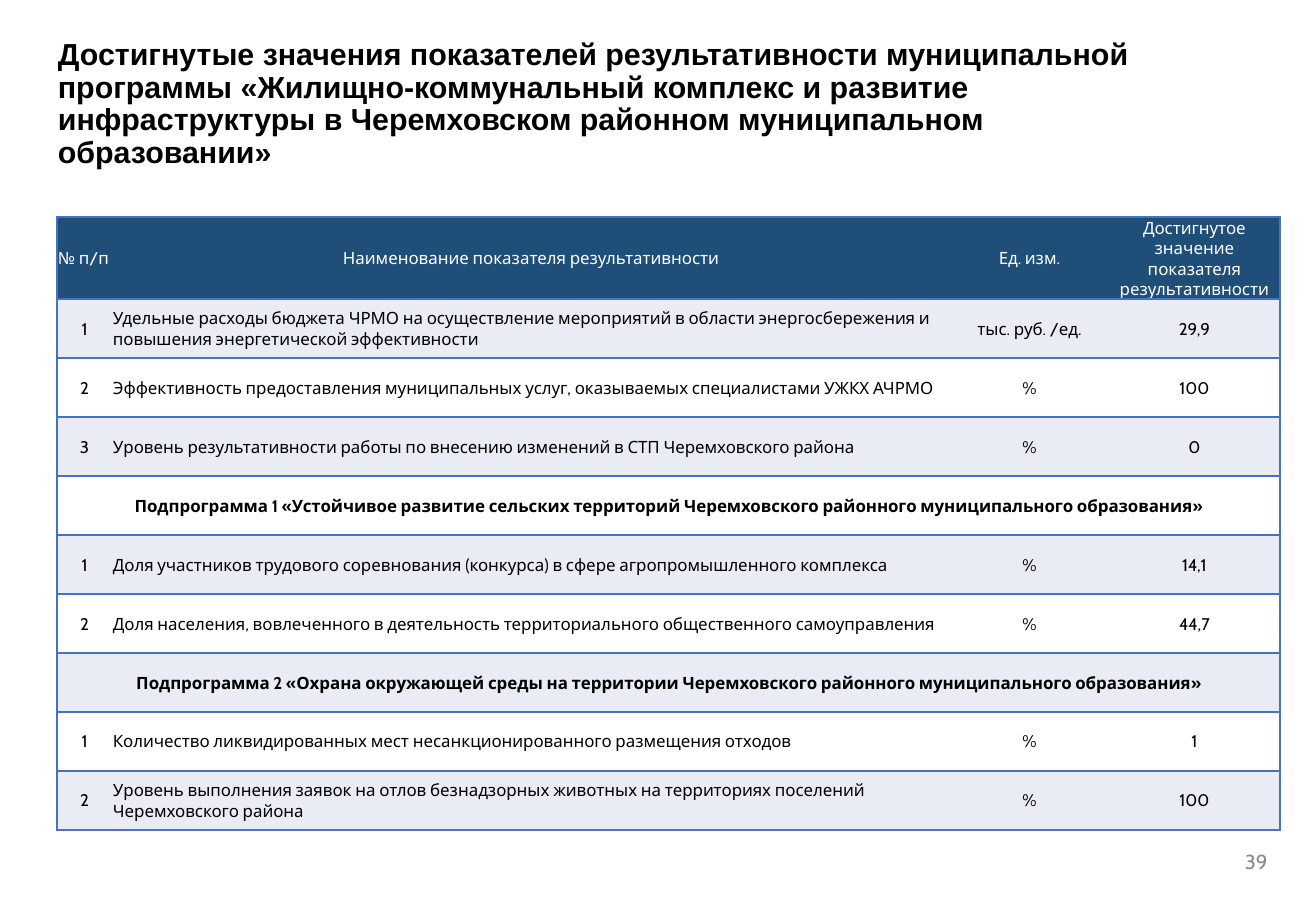
"""Build the slide with the achieved results of the municipal programme."""
from dataclasses import dataclass

from lxml.etree import SubElement
from pptx import Presentation
from pptx.dml.color import RGBColor
from pptx.enum.text import MSO_ANCHOR, PP_ALIGN
from pptx.oxml.ns import qn
from pptx.util import Pt

EMU_PER_PX = 7526


@dataclass(frozen=True)
class Theme:
    title_font: str = "Arial"
    body_font: str = "Cabin"
    title_size: int = 18
    table_size: int = 10
    number_size: int = 12
    background: str = "FFFFFF"
    text: str = "000000"
    header_text: str = "FFFFFF"
    header_fill: str = "1F4E79"
    band_fills: tuple = ("FFFFFF", "E9EBF5")
    border: str = "4472C4"
    number: str = "888888"


THEME = Theme()
TITLE = (
    "Достигнутые значения показателей результативности муниципальной программы "
    "«Жилищно-коммунальный комплекс и развитие инфраструктуры "
    "в Черемховском районном муниципальном образовании»"
)
COLUMNS = (55, 838, 159, 171)
HEADER_HEIGHT = 81
ROW_HEIGHT = 59
ROWS = [
    ("№ п/п", "Наименование показателя результативности", "Ед. изм.",
     "Достигнутое значение показателя результативности"),
    ("1", "Удельные расходы бюджета ЧРМО на осуществление мероприятий в области "
     "энергосбережения и повышения энергетической эффективности", "тыс. руб. /ед.", "29,9"),
    ("2", "Эффективность предоставления муниципальных услуг, оказываемых "
     "специалистами УЖКХ АЧРМО", "%", "100"),
    ("3", "Уровень результативности работы по внесению изменений в СТП "
     "Черемховского района", "%", "0"),
    ("Подпрограмма 1 «Устойчивое развитие сельских территорий Черемховского "
     "районного муниципального образования»",),
    ("1", "Доля участников трудового соревнования (конкурса) в сфере "
     "агропромышленного комплекса", "%", "14,1"),
    ("2", "Доля населения, вовлеченного в деятельность территориального "
     "общественного самоуправления", "%", "44,7"),
    ("Подпрограмма 2 «Охрана окружающей среды на территории Черемховского "
     "районного муниципального образования»",),
    ("1", "Количество ликвидированных мест несанкционированного размещения отходов",
     "%", "1"),
    ("2", "Уровень выполнения заявок на отлов безнадзорных животных на территориях "
     "поселений Черемховского района", "%", "100"),
]


def px(value):
    return value * EMU_PER_PX


def apply(target, values):
    for name, value in values.items():
        setattr(target, name, value)


def write(tf, text, font, size, color, bold=False, **paragraph):
    p = tf.paragraphs[0]
    apply(p, paragraph)
    r = p.add_run()
    r.text = text
    apply(r.font, {"name": font, "size": Pt(size), "bold": bold})
    r.font.color.rgb = RGBColor.from_string(color)
    return p, r


def add_text(s, box, text, font, size, color, frame=None, **options):
    sp = s.shapes.add_textbox(*map(px, box))
    tf = sp.text_frame
    apply(tf, {"word_wrap": True, **(frame or {})})
    return write(tf, text, font, size, color, **options)


def add_page_number(s, box, text):
    margins = dict.fromkeys(("margin_left", "margin_top", "margin_right", "margin_bottom"), 0)
    p, r = add_text(s, box, text, THEME.body_font, THEME.number_size, THEME.number,
                    frame=margins, line_spacing=Pt(14.2))
    p._p.get_or_add_pPr().set("marL", str(px(5)))
    r._r.get_or_add_rPr().set("spc", "-10")


def set_borders(cell, visible):
    tcPr = cell._tc.get_or_add_tcPr()
    for side in "LRTB":
        ln = SubElement(tcPr, qn(f"a:ln{side}"), w=str(Pt(1)))
        if side in visible:
            fill = SubElement(ln, qn("a:solidFill"))
            SubElement(fill, qn("a:srgbClr"), val=THEME.border)
        else:
            SubElement(ln, qn("a:noFill"))


def format_cell(cell, fill, visible):
    apply(cell, {"margin_left": px(1), "margin_top": px(1), "margin_right": px(1),
                 "margin_bottom": 0, "vertical_anchor": MSO_ANCHOR.MIDDLE})
    set_borders(cell, visible)
    cell.fill.solid()
    cell.fill.fore_color.rgb = RGBColor.from_string(fill)


def add_results_table(s, left, top):
    height = HEADER_HEIGHT + ROW_HEIGHT * (len(ROWS) - 1)
    table = s.shapes.add_table(len(ROWS), len(COLUMNS), px(left), px(top),
                               px(sum(COLUMNS)), px(height)).table
    for column, width in zip(table.columns, COLUMNS):
        column.width = px(width)
    last = len(COLUMNS) - 1
    for i, values in enumerate(ROWS):
        header, section = i == 0, len(values) == 1
        table.rows[i].height = px(HEADER_HEIGHT if header else ROW_HEIGHT)
        fill = THEME.header_fill if header else THEME.band_fills[i % 2]
        if section:
            table.cell(i, 0).merge(table.cell(i, last))
        for j in range(len(COLUMNS)):
            visible = "TB" + ("L" if j == 0 else "") + ("R" if j == last or section else "")
            format_cell(table.cell(i, j), fill, visible)
        for j, text in enumerate(values):
            at_left = j == 0 if header else j == 1
            write(table.cell(i, j).text_frame, text, THEME.body_font, THEME.table_size,
                  THEME.header_text if header else THEME.text, bold=section,
                  alignment=PP_ALIGN.LEFT if at_left else PP_ALIGN.CENTER)


def main():
    prs = Presentation()
    apply(prs, {"slide_width": px(1316), "slide_height": px(911)})
    s = prs.slides.add_slide(prs.slide_layouts[6])
    s.background.fill.solid()
    s.background.fill.fore_color.rgb = RGBColor.from_string(THEME.background)
    add_text(s, (46, 33, 1109, 149), TITLE, THEME.title_font, THEME.title_size,
             THEME.text, bold=True, line_spacing=0.9)
    add_results_table(s, 57, 217)
    add_page_number(s, (1240, 850, 33, 26), "39")
    prs.save("out.pptx")


if __name__ == "__main__":
    main()
